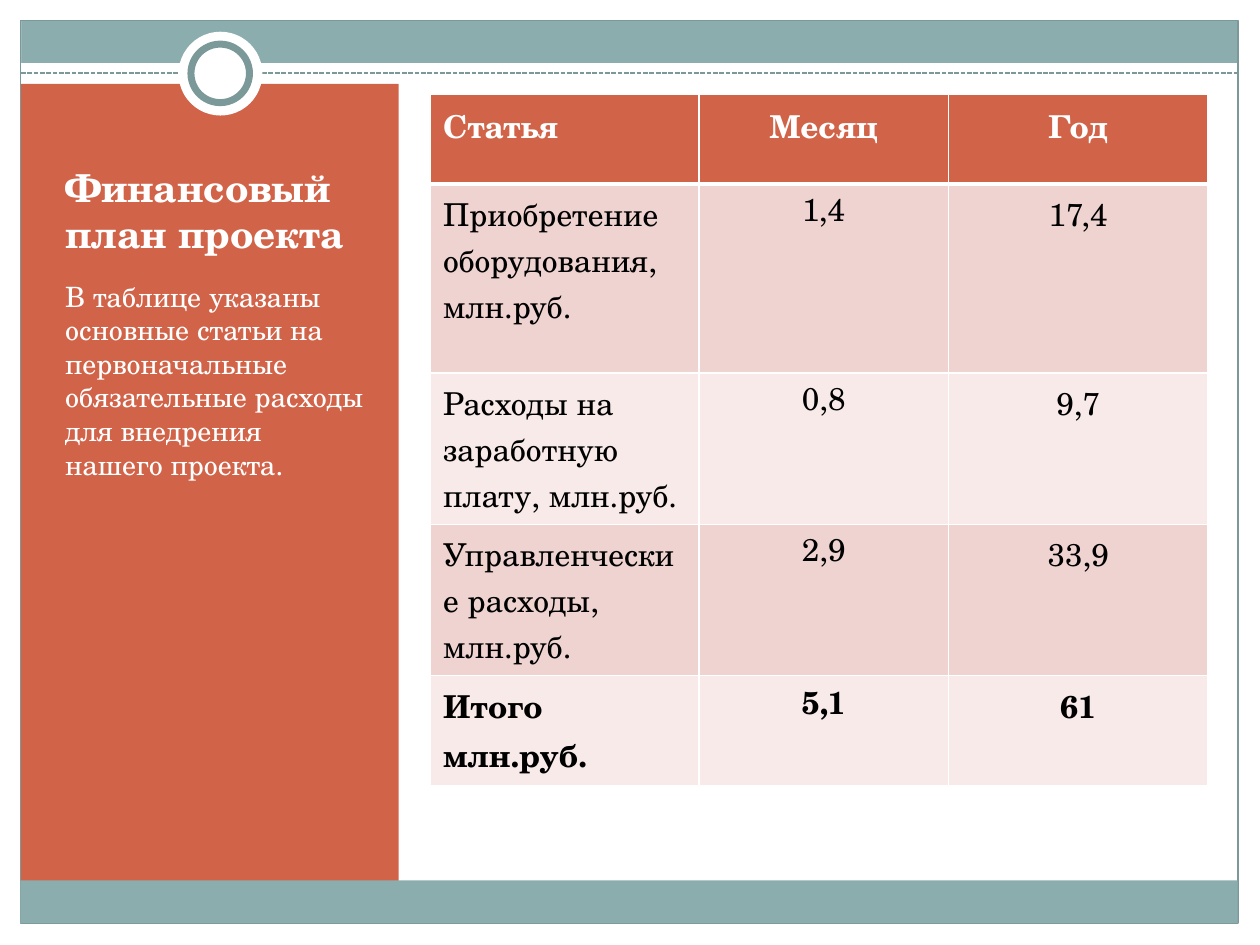
from pptx import Presentation
from pptx.dml.color import RGBColor
from pptx.enum.dml import MSO_LINE
from pptx.enum.shapes import MSO_CONNECTOR, MSO_SHAPE
from pptx.enum.text import MSO_ANCHOR, MSO_AUTO_SIZE, PP_ALIGN
from pptx.oxml.ns import qn
from pptx.util import Cm, Pt
from lxml import etree

RECTANGLE, OVAL = MSO_SHAPE.RECTANGLE, MSO_SHAPE.OVAL
STRAIGHT = MSO_CONNECTOR.STRAIGHT
DASH = MSO_LINE.SQUARE_DOT
TOP, BOTTOM = MSO_ANCHOR.TOP, MSO_ANCHOR.BOTTOM
LEFT, CENTER = PP_ALIGN.LEFT, PP_ALIGN.CENTER
NO_FIT = MSO_AUTO_SIZE.NONE

FONT = "TeX Gyre Schola"
WHITE, BLACK = "FFFFFF", "000000"
BAND, EDGE, ACCENT = "8CADAE", "7C999A", "D16349"
ROW_TINTS = ("EED3D0", "F7EAE9")

COLUMN_WIDTHS = (5.41, 5.03, 5.23)
ROW_HEIGHTS = (1.8, 3.81, 3.05, 3.05, 2.2)
EXPENSES = (
    ("Статья", "Месяц", "Год"),
    ("Приобретение оборудования, млн.руб.", "1,4", "17,4"),
    ("Расходы на заработную плату, млн.руб.", "0,8", "9,7"),
    ("Управленческие расходы, млн.руб.", "2,9", "33,9"),
    ("Итого млн.руб.", "5,1", "61"),
)


def color(value):
    return RGBColor.from_string(value)


def set_font(para, size, value, bold=False):
    font = para.font
    font.name, font.size, font.bold = FONT, Pt(size), bold
    font.color.rgb = color(value)


def add_box(page, kind, left, top, width, height, fill=None, line=None, weight=0.75):
    box = page.shapes.add_shape(kind, Cm(left), Cm(top), Cm(width), Cm(height))
    box.shadow.inherit = False
    if fill:
        box.fill.solid()
        box.fill.fore_color.rgb = color(fill)
    else:
        box.fill.background()
    if line:
        box.line.color.rgb = color(line)
        box.line.width = Pt(weight)
    else:
        box.line.fill.background()


def add_dashed_rule(page, left, right, height):
    rule = page.shapes.add_connector(STRAIGHT, Cm(left), Cm(height), Cm(right), Cm(height))
    rule.line.color.rgb = color(EDGE)
    rule.line.width = Pt(0.9)
    rule.line.dash_style = DASH
    etree.SubElement(rule._element.spPr, qn("a:effectLst"))


def fill_placeholder(box, text, top, height, anchor, size, bold=False):
    box.left, box.top, box.width, box.height = Cm(1.06), Cm(top), Cm(6.55), Cm(height)
    frame = box.text_frame
    frame.text = text
    frame.word_wrap = True
    frame.auto_size = NO_FIT
    frame.vertical_anchor = anchor
    para = frame.paragraphs[0]
    para.alignment = LEFT
    set_font(para, size, WHITE, bold)
    # Bring the text in front of the decoration
    box._element.getparent().append(box._element)
    return para


def set_borders(cell, top, bottom):
    properties = cell._tc.get_or_add_tcPr()
    sides = (("L", 1), ("R", 1), ("T", top), ("B", bottom))
    for position, (side, weight) in enumerate(sides):
        line = etree.Element(qn("a:ln" + side), w=str(Pt(weight)))
        fill = etree.SubElement(line, qn("a:solidFill"))
        etree.SubElement(fill, qn("a:srgbClr"), val=WHITE)
        properties.insert(position, line)


def format_cell(cell, text, row, column):
    header, total = row == 0, row == len(EXPENSES) - 1
    cell.text = text
    cell.fill.solid()
    cell.fill.fore_color.rgb = color(ACCENT if header else ROW_TINTS[(row - 1) % 2])
    if column == 1 and not header:
        cell.margin_left = cell.margin_right = cell.margin_top = Cm(0.03)
        cell.margin_bottom = 0
    para = cell.text_frame.paragraphs[0]
    para.alignment = CENTER if column else LEFT
    set_font(para, 18, WHITE if header else BLACK, header or total)
    set_borders(cell, top=3 if row == 1 else 1, bottom=3 if header else 1)


def add_expense_table(page):
    table = page.shapes.add_table(
        len(EXPENSES), len(COLUMN_WIDTHS), Cm(8.68), Cm(1.91),
        Cm(sum(COLUMN_WIDTHS)), Cm(sum(ROW_HEIGHTS))).table
    for column, width in zip(table.columns, COLUMN_WIDTHS):
        column.width = Cm(width)
    for row, height in zip(table.rows, ROW_HEIGHTS):
        row.height = Cm(height)
    for row, texts in enumerate(EXPENSES):
        for column, text in enumerate(texts):
            format_cell(table.cell(row, column), text, row, column)


def add_decoration(page):
    # Top band
    add_box(page, RECTANGLE, 0.42, 0.42, 24.54, 0.85, fill=BAND)
    # White margins: bottom, right, top, left
    for margin in ((0, 18.62, 25.4, 0.43), (24.97, 0, 0.43, 19.05),
                   (0, 0, 25.4, 0.33), (0, 0, 0.43, 19.05)):
        add_box(page, RECTANGLE, *margin, fill=WHITE)
    # Side panel and frame
    add_box(page, RECTANGLE, 0.42, 1.69, 7.62, 16.31, fill=ACCENT)
    add_box(page, RECTANGLE, 0.42, 0.42, 24.54, 18.19, line=EDGE)
    add_dashed_rule(page, 0.42, 24.96, 1.47)
    # Ring over the rule
    add_box(page, OVAL, 3.6, 0.64, 1.69, 1.69, fill=WHITE)
    add_box(page, OVAL, 3.85, 0.89, 1.18, 1.18, fill=WHITE, line=EDGE, weight=4)
    # Bottom band
    add_box(page, RECTANGLE, 0.41, 17.75, 24.54, 0.86, fill=BAND)


def main():
    deck = Presentation()
    deck.slide_width, deck.slide_height = Cm(25.4), Cm(19.05)
    page = deck.slides.add_slide(deck.slide_layouts.get_by_name("Content with Caption"))
    title, content, body = page.placeholders
    content._element.getparent().remove(content._element)

    add_decoration(page)
    fill_placeholder(title, "Финансовый план проекта", 2.54, 2.75, BOTTOM, 22, bold=True)
    para = fill_placeholder(
        body, "В таблице указаны основные статьи на первоначальные обязательные "
        "расходы для внедрения нашего проекта.", 5.5, 11.51, TOP, 16)
    para.space_before, para.space_after = Pt(3.2), Pt(10)
    add_expense_table(page)
    deck.save("out.pptx")


if __name__ == "__main__":
    main()
